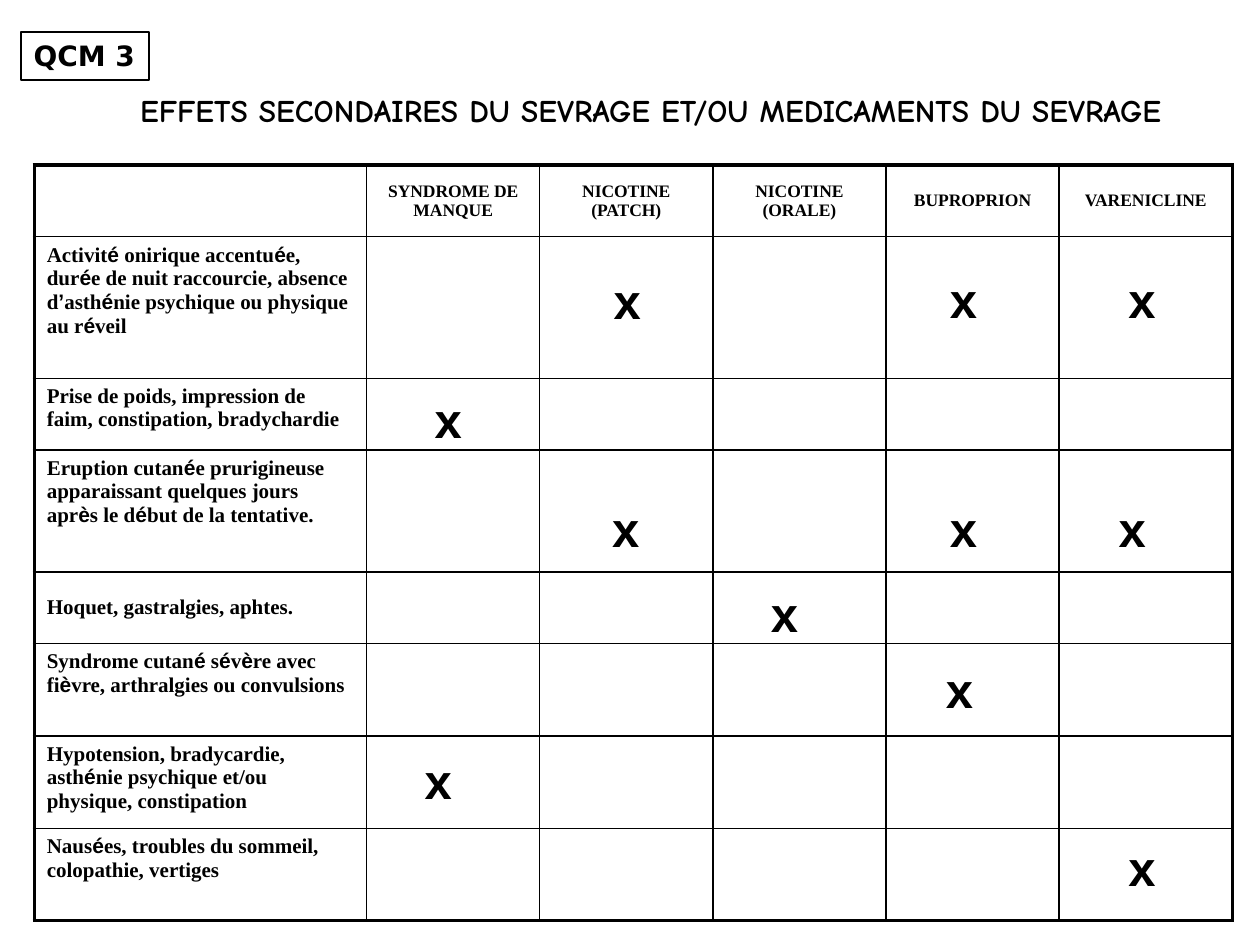
from itertools import groupby

from lxml.etree import SubElement
from pptx import Presentation
from pptx.dml.color import RGBColor
from pptx.enum.shapes import MSO_SHAPE
from pptx.enum.text import MSO_ANCHOR, MSO_AUTO_SIZE, PP_ALIGN
from pptx.oxml.ns import qn
from pptx.util import Cm, Pt

BLACK = RGBColor(0, 0, 0)
WHITE = RGBColor(255, 255, 255)
THIN, THICK = Pt(1), Pt(2.25)
ACCENTED = "éè’"

TREATMENTS = ["SYNDROME DE MANQUE", "NICOTINE (PATCH)", "NICOTINE (ORALE)",
              "BUPROPRION", "VARENICLINE"]
EFFECTS = [
    ("Activité onirique accentuée, durée de nuit raccourcie, absence "
     "d’asthénie psychique ou physique au réveil", 2.86),
    ("Prise de poids, impression de faim, constipation, bradychardie", 1.44),
    ("Eruption cutanée prurigineuse apparaissant quelques jours "
     "après le début de la tentative.", 2.46),
    ("Hoquet, gastralgies, aphtes.", 1.44),
    ("Syndrome cutané sévère avec fièvre, arthralgies ou convulsions", 1.87),
    ("Hypotension, bradycardie, asthénie psychique et/ou physique, "
     "constipation", 1.86),
    ("Nausées, troubles du sommeil, colopathie, vertiges", 1.86),
]
CROSSES = [(12.09, 9.93), (12.12, 5.33), (18.9, 9.93), (18.9, 5.31),
           (22.5, 5.31), (15.29, 11.63), (18.82, 13.18), (8.31, 15.01),
           (8.51, 7.72), (22.5, 16.76), (22.3, 9.93)]


def add_text(paragraph, text, font_name, size):
    run = paragraph.add_run()
    run.text = text
    for attribute, value in {"name": font_name, "size": Pt(size), "bold": True}.items():
        setattr(run.font, attribute, value)
    run.font.color.rgb = BLACK


def add_border(cell, side, width):
    line = SubElement(cell._tc.get_or_add_tcPr(), qn(f"a:{side}"), w=str(width))
    color = SubElement(SubElement(line, qn("a:solidFill")), qn("a:srgbClr"))
    color.set("val", str(BLACK))


presentation = Presentation()
presentation.slide_width = Cm(25.4)
presentation.slide_height = Cm(19.05)
slide = presentation.slides.add_slide(presentation.slide_layouts[5])

heading = slide.shapes.title
for attribute, value in {"left": Cm(0.84), "top": Cm(1.7),
                         "width": Cm(24.56), "height": Cm(1.47)}.items():
    setattr(heading, attribute, value)
heading.text_frame.vertical_anchor = MSO_ANCHOR.TOP
heading.text_frame.auto_size = MSO_AUTO_SIZE.NONE
heading.text_frame.paragraphs[0].alignment = PP_ALIGN.CENTER
add_text(heading.text_frame.paragraphs[0],
         "EFFETS SECONDAIRES DU SEVRAGE ET/OU MEDICAMENTS DU SEVRAGE",
         "Comic Neue", 18)

question = slide.shapes.add_shape(MSO_SHAPE.RECTANGLE, Cm(0.43), Cm(0.64), Cm(2.57), Cm(0.97))
question.shadow.inherit = False
question.fill.background()
question.line.color.rgb = BLACK
question.line.width = THIN
question.text_frame.word_wrap = False
question.text_frame.auto_size = MSO_AUTO_SIZE.SHAPE_TO_FIT_TEXT
question.text_frame.paragraphs[0].alignment = PP_ALIGN.LEFT
add_text(question.text_frame.paragraphs[0], "QCM 3", "DejaVu Sans", 16)

row_heights = [1.44] + [height for _, height in EFFECTS]
column_widths = [6.7] + [3.49] * len(TREATMENTS)
last_row, last_column = len(EFFECTS), len(TREATMENTS)
grid = slide.shapes.add_table(last_row + 1, last_column + 1, Cm(0.69), Cm(3.33),
                              Cm(sum(column_widths)), Cm(sum(row_heights))).table
grid.first_row = False
grid.horz_banding = False
for column, width in zip(grid.columns, column_widths):
    column.width = Cm(width)
for row, height in zip(grid.rows, row_heights):
    row.height = Cm(height)

for r in range(last_row + 1):
    for c in range(last_column + 1):
        cell = grid.cell(r, c)
        outer_sides = {"lnL": c == 0, "lnR": c == last_column,
                       "lnT": r == 0, "lnB": r == last_row}
        for side, is_outer in outer_sides.items():
            add_border(cell, side, THICK if is_outer else THIN)
        cell.fill.solid()
        cell.fill.fore_color.rgb = WHITE

for c, treatment in enumerate(TREATMENTS, 1):
    cell = grid.cell(0, c)
    cell.vertical_anchor = MSO_ANCHOR.MIDDLE
    cell.text_frame.paragraphs[0].alignment = PP_ALIGN.CENTER
    add_text(cell.text_frame.paragraphs[0], treatment, "Times New Roman", 10)

for r, (effect, _) in enumerate(EFFECTS, 1):
    cell = grid.cell(r, 0)
    if effect.startswith("Hoquet"):
        cell.vertical_anchor = MSO_ANCHOR.MIDDLE
    for is_accented, letters in groupby(effect, lambda letter: letter in ACCENTED):
        add_text(cell.text_frame.paragraphs[0], "".join(letters),
                 "Arial" if is_accented else "Times New Roman", 12)

for left, top in CROSSES:
    cross = slide.shapes.add_textbox(Cm(left), Cm(top), Cm(1.47), Cm(1.45))
    cross.text_frame.word_wrap = True
    cross.text_frame.auto_size = MSO_AUTO_SIZE.SHAPE_TO_FIT_TEXT
    add_text(cross.text_frame.paragraphs[0], "x", "Arial", 28)

presentation.save("out.pptx")
